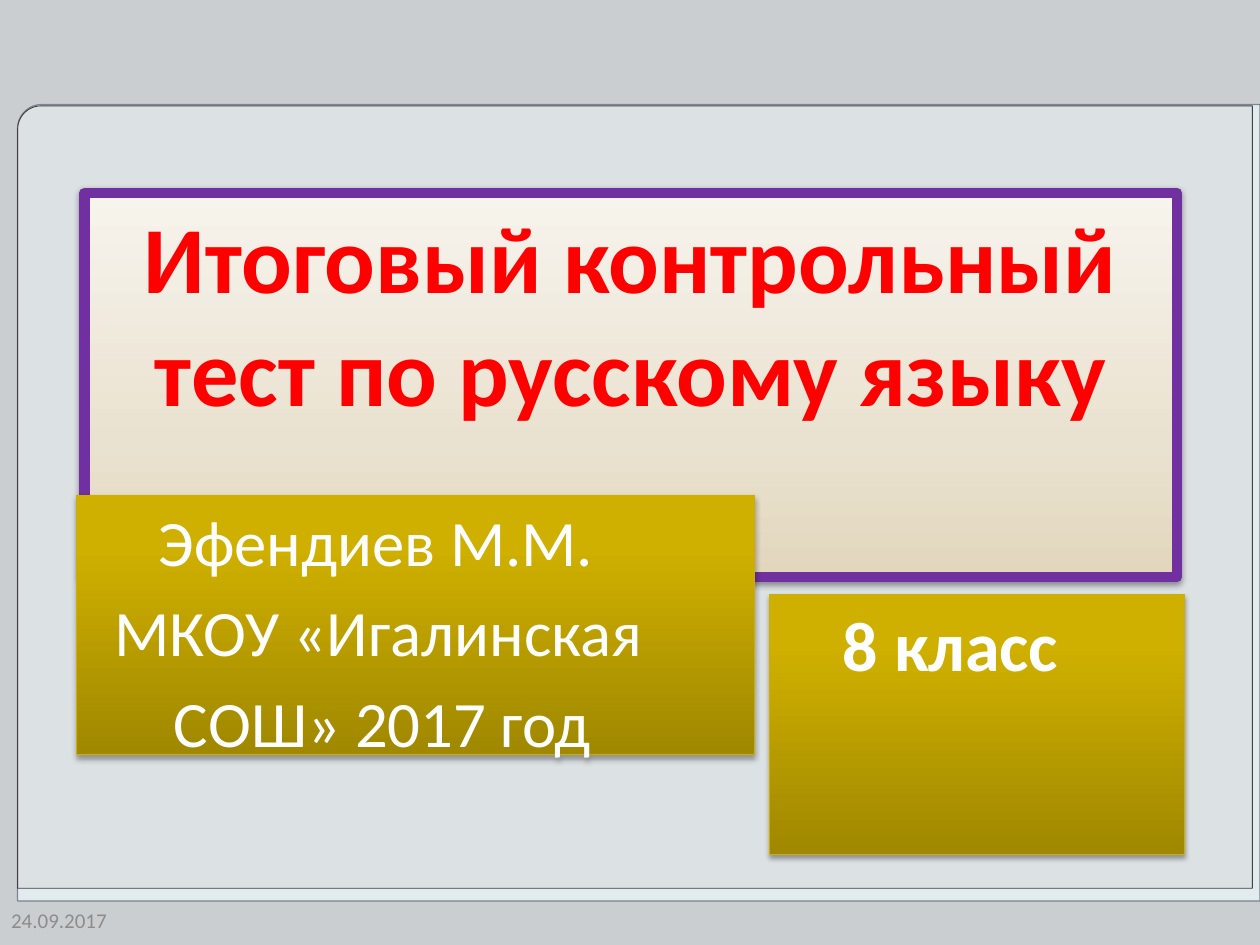
"""Build the title slide of a Russian language test for the eighth grade."""
from dataclasses import dataclass

from lxml import etree
from pptx import Presentation
from pptx import util as u
from pptx.dml.color import RGBColor
from pptx.enum import shapes, text
from pptx.oxml import ns

COLORS = {
    "background": "CBCED1", "back_page": "E2ECEF", "back_edge": "7E848D",
    "front_page": "D8D8D8", "front_edge": "3F4247", "date": "8C8C8C",
    "heading": "FF0000", "frame": "7030A0", "caption": "FFFFFF",
    "gold_edge": "CCAE05", "shadow": "000000",
}
CREAM = ((0, "E2D7BD"), (35, "EAE2D0"), (100, "F7F4ED"))
GOLD = ((0, "A08800"), (80, "CFB000"), (100, "D0B100"))
FONT = "Calibri"


@dataclass(frozen=True)
class Page:
    box: tuple[float, float, float, float]
    fill: str
    edge: str
    edge_width: float
    opacity: int


@dataclass(frozen=True)
class Panel:
    box: tuple[float, float, float, float]
    lines: tuple[str, ...]
    indents: tuple[float, ...]
    size: float
    color: str
    bold: bool
    align: text.PP_ALIGN
    stops: tuple[tuple[int, str], ...]
    edge: str
    edge_width: float
    shadow_opacity: int
    shadow_distance: float


PAGES = (
    Page((0.14, 0.83, 9.86, 6.32), "back_page", "back_edge", 0.75, 100),
    Page((0.14, 0.84, 9.8, 6.21), "front_page", "front_edge", 0.5, 50),
)
PANELS = (
    Panel((0.67, 1.53, 8.67, 3.05),
          ("Итоговый контрольный тест по русскому языку",), (0,),
          54, "heading", True, text.PP_ALIGN.CENTER, CREAM, "frame", 6, 38, 1.6),
    Panel((0.61, 3.93, 5.38, 2.06),
          ("Эфендиев М.М.", "МКОУ «Игалинская", "СОШ» 2017 год"), (0.55, 0.2, 0.67),
          37, "caption", False, text.PP_ALIGN.LEFT, GOLD, "gold_edge", 0.75, 35, 1.8),
    Panel((6.11, 4.72, 3.29, 2.06), ("8 класс",), (0.48,),
          40, "caption", True, text.PP_ALIGN.LEFT, GOLD, "gold_edge", 0.75, 35, 1.8),
)


def rgb(name: str) -> RGBColor:
    """Return the named colour."""
    return RGBColor.from_string(COLORS[name])


def add_child(parent, tag: str, **attributes):
    """Append a DrawingML element with the given attributes."""
    return etree.SubElement(parent, ns.qn(f"a:{tag}"),
                            {key: str(value) for key, value in attributes.items()})


def style_line(shape, color: str, width: float) -> None:
    """Outline a shape."""
    shape.line.color.rgb = rgb(color)
    shape.line.width = u.Pt(width)


def draw_page(slide, page: Page, depth: int) -> None:
    """Draw a sheet with a rounded top left corner behind the text."""
    sheet = slide.shapes.add_shape(shapes.MSO_SHAPE.ROUND_1_RECTANGLE,
                                   *map(u.Inches, page.box))
    sheet.adjustments[0] = 0.03
    sheet.shadow.inherit = False
    sheet.fill.solid()
    sheet.fill.fore_color.rgb = rgb(page.fill)
    style_line(sheet, page.edge, page.edge_width)
    properties = sheet.element.spPr
    properties.find(ns.qn("a:xfrm")).set("flipH", "1")
    fill_color = properties.find(f"{ns.qn('a:solidFill')}/{ns.qn('a:srgbClr')}")
    add_child(fill_color, "alpha", val=page.opacity * 1000)
    slide.shapes.element.insert(2 + depth, sheet.element)


def fill_gradient(shape, stops: tuple[tuple[int, str], ...]) -> None:
    """Fill a shape with a gradient that runs from bottom to top."""
    shape.fill.gradient()
    shape.fill.gradient_angle = 90
    stop_list = shape.element.spPr.find(f".//{ns.qn('a:gsLst')}")
    for old_stop in list(stop_list):
        stop_list.remove(old_stop)
    for position, color in stops:
        stop = add_child(stop_list, "gs", pos=position * 1000)
        add_child(stop, "srgbClr", val=color)


def cast_shadow(shape, opacity: int, distance: float) -> None:
    """Give a shape a soft shadow below it."""
    effects = add_child(shape.element.spPr, "effectLst")
    shadow = add_child(effects, "outerShdw", blurRad=u.Pt(3.1), dist=u.Pt(distance),
                       dir=5400000, algn="t", rotWithShape=0)
    color = add_child(shadow, "srgbClr", val=COLORS["shadow"])
    add_child(color, "alpha", val=opacity * 1000)


def format_text(paragraph, size: float, color: str, bold: bool = False) -> None:
    """Format every run of a paragraph."""
    for run in paragraph.runs:
        run.font.name = FONT
        run.font.size = u.Pt(size)
        run.font.bold = bold
        run.font.color.rgb = rgb(color)


def fill_panel(placeholder, panel: Panel) -> None:
    """Place, style and write one placeholder."""
    (placeholder.left, placeholder.top,
     placeholder.width, placeholder.height) = map(u.Inches, panel.box)
    fill_gradient(placeholder, panel.stops)
    style_line(placeholder, panel.edge, panel.edge_width)
    cast_shadow(placeholder, panel.shadow_opacity, panel.shadow_distance)
    frame = placeholder.text_frame
    frame.text = "\n".join(panel.lines)
    frame.word_wrap = True
    frame.auto_size = text.MSO_AUTO_SIZE.NONE
    frame.vertical_anchor = text.MSO_ANCHOR.TOP
    for paragraph, indent in zip(frame.paragraphs, panel.indents):
        paragraph.alignment = panel.align
        paragraph.space_before = u.Pt(panel.size * 0.2)
        properties = paragraph._p.get_or_add_pPr()
        properties.set("marL", str(u.Inches(indent)))
        properties.set("indent", "0")
        add_child(properties, "buNone")
        format_text(paragraph, panel.size, panel.color, panel.bold)


def add_date(slide) -> None:
    """Write the date in the bottom left corner."""
    date = slide.shapes.add_textbox(*map(u.Inches, (-0.01, 7.1, 1.17, 0.4)))
    date.text_frame.text = "24.09.2017"
    date.text_frame.word_wrap = True
    date.text_frame.vertical_anchor = text.MSO_ANCHOR.MIDDLE
    format_text(date.text_frame.paragraphs[0], 12, "date")


def main() -> None:
    """Build and save the slide."""
    deck = Presentation()
    deck.slide_width, deck.slide_height = u.Inches(10), u.Inches(7.5)
    slide = deck.slides.add_slide(deck.slide_layouts[3])
    slide.background.fill.solid()
    slide.background.fill.fore_color.rgb = rgb("background")
    for placeholder, panel in zip(slide.placeholders, PANELS):
        fill_panel(placeholder, panel)
    for depth, page in enumerate(PAGES):
        draw_page(slide, page, depth)
    add_date(slide)
    deck.save("out.pptx")


if __name__ == "__main__":
    main()
